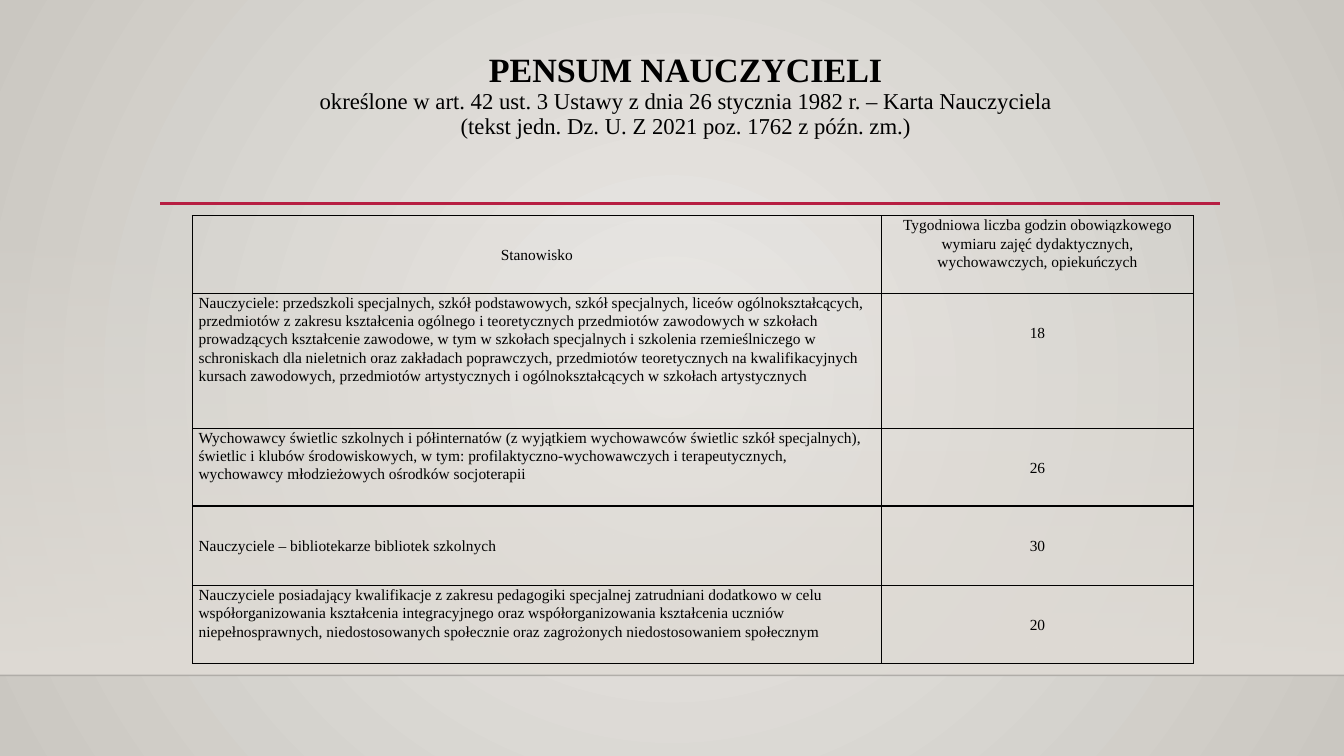
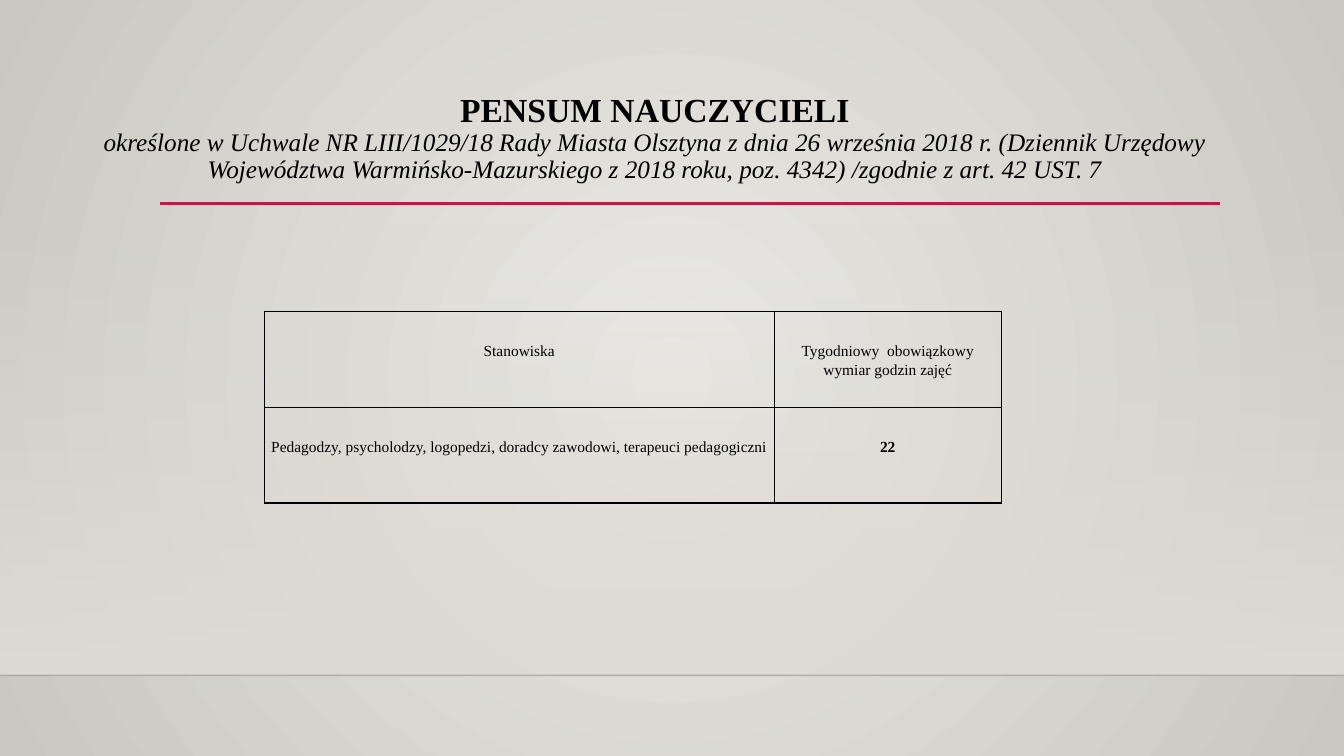
from dataclasses import dataclass

from lxml import etree
from pptx import Presentation
from pptx import util as u
from pptx.dml.color import RGBColor
from pptx.enum import shapes, text
from pptx.oxml import ns

COLOURS = {
    "ink": "000000",
    "accent": "B71E42",
    "centre": "ECEAE7",
    "edge": "CAC7C1",
    "band": "DFDBD5",
}
FONT = "Times New Roman"
WIDTH, HEIGHT = 13.33, 7.5
BAND_TOP, BAND_BOTTOM = 2.21, 6.7
CELL_DROP = 0.3


@dataclass
class Cell:
    """Text of a table cell; a low cell starts further below its top border."""
    words: str
    low: bool = True
    bold: bool = False


def rgb(name):
    return RGBColor.from_string(COLOURS[name])


def add_xml(parent, tag, **attributes):
    return etree.SubElement(parent, ns.qn(tag), attributes)


def set_opacity(element, percent):
    """Make the first plain colour inside the element see-through."""
    colour = next(element.iter(ns.qn("a:srgbClr")))
    add_xml(colour, "a:alpha", val=str(percent * 1000))


def set_gradient(fill, *names):
    fill.gradient()
    for stop, name in zip(fill.gradient_stops, names):
        stop.color.rgb = rgb(name)


class Deck:
    def __init__(self):
        self.show = Presentation()
        self.show.slide_width = u.Inches(WIDTH)
        self.show.slide_height = u.Inches(HEIGHT)
        self.page = None
        self.set_background()

    def set_background(self):
        """Give the master a round gradient that every page inherits."""
        master = self.show.slide_master
        set_gradient(master.background.fill, "centre", "edge")
        gradient = next(master._element.cSld.iter(ns.qn("a:gradFill")))
        gradient.remove(gradient.find(ns.qn("a:lin")))
        circle = add_xml(gradient, "a:path", path="circle")
        add_xml(circle, "a:fillToRect", **dict.fromkeys("ltrb", "50000"))

    def add_page(self):
        self.page = self.show.slides.add_slide(self.show.slide_layouts[6])
        self.add_band()
        floor = self.add_rule(0, WIDTH, BAND_BOTTOM, "ink", 1)
        set_opacity(floor._element, 20)
        self.add_rule(1.59, 12.1, 2.02, "accent", 2.5)

    def add_band(self):
        band = self.page.shapes.add_shape(
            shapes.MSO_SHAPE.RECTANGLE, 0, u.Inches(BAND_TOP),
            u.Inches(WIDTH), u.Inches(BAND_BOTTOM - BAND_TOP))
        band.shadow.inherit = False
        band.line.fill.background()
        set_gradient(band.fill, "band", "band")
        band.fill.gradient_angle = 270
        set_opacity(band._element, 0)

    def add_rule(self, left, right, top, colour, weight):
        rule = self.page.shapes.add_connector(
            shapes.MSO_CONNECTOR.STRAIGHT, u.Inches(left), u.Inches(top),
            u.Inches(right), u.Inches(top))
        rule.line.color.rgb = rgb(colour)
        rule.line.width = u.Pt(weight)
        add_xml(rule._element.spPr, "a:effectLst")
        return rule

    def fill_para(self, para, words, size, centred=True, spacing=1.0, **formats):
        para.alignment = text.PP_ALIGN.CENTER if centred else text.PP_ALIGN.LEFT
        para.line_spacing = spacing
        span = para.add_run()
        span.text = words
        span.font.color.rgb = rgb("ink")
        for name, value in {"name": FONT, "size": u.Pt(size), **formats}.items():
            setattr(span.font, name, value)

    def add_title(self, place, heading, heading_size, lines, size, italic=False):
        box = self.page.shapes.add_textbox(*map(u.Inches, place))
        frame = box.text_frame
        frame.word_wrap = True
        self.fill_para(frame.paragraphs[0], heading, heading_size, spacing=0.9, bold=True)
        for line in lines:
            self.fill_para(frame.add_paragraph(), line, size, spacing=0.9, italic=italic)

    def add_table(self, left, top, widths, heights, rows, inset):
        frame = self.page.shapes.add_table(
            len(heights), len(widths), u.Inches(left), u.Inches(top),
            u.Inches(sum(widths)), u.Inches(sum(heights)))
        table = frame.table
        table.first_row = table.horz_banding = False
        for column, width in zip(table.columns, widths):
            column.width = u.Inches(width)
        for row, height in zip(table.rows, heights):
            row.height = u.Inches(height)
        for r, row in enumerate(rows):
            for c, content in enumerate(row):
                centred = r == 0 or c > 0
                self.fill_cell(table.cell(r, c), content, centred, inset)

    def fill_cell(self, cell, content, centred, inset):
        cell.margin_left = cell.margin_right = u.Inches(inset)
        cell.margin_top = u.Inches(CELL_DROP if content.low else 0)
        cell.margin_bottom = 0
        self.fill_para(cell.text_frame.paragraphs[0], content.words, 11, centred,
                       spacing=1.07, bold=content.bold)
        properties = cell._tc.get_or_add_tcPr()
        for side in "LRTB":
            border = add_xml(properties, f"a:ln{side}", w=str(u.Pt(1)))
            paint = add_xml(border, "a:solidFill")
            add_xml(paint, "a:srgbClr", val=COLOURS["ink"])
        cell.fill.background()


def add_statutory_hours(deck):
    deck.add_page()
    deck.add_title(
        (1.55, 0.48, 10.5, 1.12), "PENSUM NAUCZYCIELI", 24.3,
        ["określone w art. 42 ust. 3 Ustawy z dnia 26 stycznia 1982 r. – Karta Nauczyciela",
         "(tekst jedn. Dz. U. Z 2021 poz. 1762 z późn. zm.)"], 16.2)
    rows = [
        (Cell("Stanowisko"),
         Cell("Tygodniowa liczba godzin obowiązkowego wymiaru zajęć dydaktycznych, "
              "wychowawczych, opiekuńczych", low=False)),
        (Cell("Nauczyciele: przedszkoli specjalnych, szkół podstawowych, szkół "
              "specjalnych, liceów ogólnokształcących, przedmiotów z zakresu "
              "kształcenia ogólnego i teoretycznych przedmiotów zawodowych w szkołach "
              "prowadzących kształcenie zawodowe, w tym w szkołach specjalnych i "
              "szkolenia rzemieślniczego w schroniskach dla nieletnich oraz zakładach "
              "poprawczych, przedmiotów teoretycznych na kwalifikacyjnych kursach "
              "zawodowych, przedmiotów artystycznych i ogólnokształcących w szkołach "
              "artystycznych", low=False),
         Cell("18")),
        (Cell("Wychowawcy świetlic szkolnych i półinternatów (z wyjątkiem wychowawców "
              "świetlic szkół specjalnych), świetlic i klubów środowiskowych, w tym: "
              "profilaktyczno-wychowawczych i terapeutycznych, wychowawcy młodzieżowych "
              "ośrodków socjoterapii", low=False),
         Cell("26")),
        (Cell("Nauczyciele – bibliotekarze bibliotek szkolnych"), Cell("30")),
        (Cell("Nauczyciele posiadający kwalifikacje z zakresu pedagogiki specjalnej "
              "zatrudniani dodatkowo w celu współorganizowania kształcenia "
              "integracyjnego oraz współorganizowania kształcenia uczniów "
              "niepełnosprawnych, niedostosowanych społecznie oraz zagrożonych "
              "niedostosowaniem społecznym", low=False),
         Cell("20")),
    ]
    deck.add_table(1.91, 2.14, [6.83, 3.1], [0.77, 1.34, 0.77, 0.79, 0.77], rows, 0.06)


def add_council_hours(deck):
    deck.add_page()
    deck.add_title(
        (0.92, 0.88, 11.15, 1.15), "PENSUM NAUCZYCIELI", 24,
        ["określone w Uchwale NR LIII/1029/18 Rady Miasta Olsztyna z dnia 26 września "
         "2018 r. (Dziennik Urzędowy Województwa Warmińsko-Mazurskiego z 2018 roku, "
         "poz. 4342) /zgodnie z art. 42 UST. 7"], 18, italic=True)
    rows = [
        (Cell("Stanowiska"), Cell("Tygodniowy  obowiązkowy wymiar godzin zajęć")),
        (Cell("Pedagodzy, psycholodzy, logopedzi, doradcy zawodowi, terapeuci "
              "pedagogiczni"),
         Cell("22", bold=True)),
    ]
    deck.add_table(2.62, 3.09, [5.06, 2.25], [0.95, 0.95], rows, 0.07)


def main():
    deck = Deck()
    add_statutory_hours(deck)
    add_council_hours(deck)
    deck.show.save("out.pptx")


if __name__ == "__main__":
    main()
